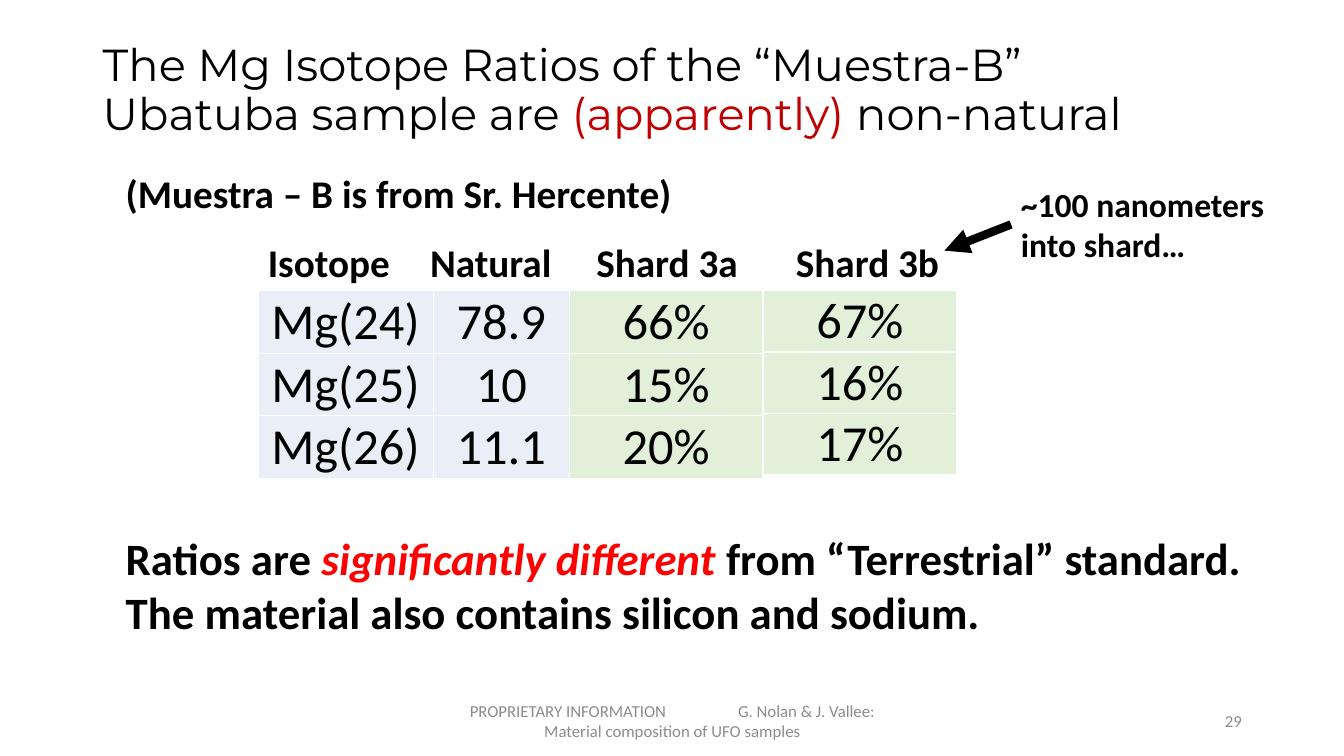
from lxml.etree import SubElement
from pptx import Presentation
from pptx.dml.color import RGBColor
from pptx.enum.shapes import MSO_CONNECTOR
from pptx.enum.text import MSO_ANCHOR, PP_ALIGN
from pptx.oxml.ns import qn
from pptx.util import Cm, Pt

BLACK = RGBColor(0x00, 0x00, 0x00)
WHITE = RGBColor(0xFF, 0xFF, 0xFF)
GREY = RGBColor(0x8C, 0x8C, 0x8C)
DARK_RED = RGBColor(0xC0, 0x00, 0x00)
RED = RGBColor(0xFF, 0x00, 0x00)
PALE_BLUE = RGBColor(0xEA, 0xEF, 0xF7)
PALE_GREEN = RGBColor(0xE2, 0xF0, 0xD9)

HEADING_WIDTH = 4.88  # cm, wide enough for the longest heading
COLUMNS = [  # heading, heading offset from table left (cm), width (cm), fill
    ("Isotope", 0, 4.42, PALE_BLUE),
    ("Natural", 4.09, 3.43, PALE_BLUE),
    ("Shard 3a", 8.28, 4.88, PALE_GREEN),
    ("Shard 3b", 13.31, 4.88, PALE_GREEN),
]
RATIOS = [
    ("Mg(24)", "78.9", "66%", "67%"),
    ("Mg(25)", "10", "15%", "16%"),
    ("Mg(26)", "11.1", "20%", "17%"),
]


def style(span, size, color=BLACK, bold=False, italic=False, font="Calibri"):
    span.font.name = font
    span.font.size = Pt(size)
    span.font.bold = bold
    span.font.italic = italic
    span.font.color.rgb = color


def add_text(page, box, lines, size, color=BLACK, bold=False, align=PP_ALIGN.LEFT,
             anchor=MSO_ANCHOR.TOP, wrap=True):
    """Place one paragraph per line in a box given in cm."""
    frame = page.shapes.add_textbox(*map(Cm, box)).text_frame
    frame.word_wrap = wrap
    frame.vertical_anchor = anchor
    for index, line in enumerate(lines):
        para = frame.add_paragraph() if index else frame.paragraphs[0]
        para.text = line
        para.alignment = align
        for span in para.runs:
            style(span, size, color, bold)
    return frame


def add_spans(para, spans, size, **look):
    """Append differently coloured spans to a paragraph."""
    for text, color, italic in spans:
        span = para.add_run()
        span.text = text
        style(span, size, color, italic=italic, **look)


def add_title(page, box):
    frame = add_text(page, box, [""], 32, anchor=MSO_ANCHOR.MIDDLE)
    para = frame.paragraphs[0]
    para.line_spacing = 0.9
    add_spans(para, [("The Mg Isotope Ratios of the “Muestra-B”", BLACK, False)],
              32, font="Montserrat")
    para.add_line_break()
    add_spans(para, [("Ubatuba sample are ", BLACK, False),
                     ("(apparently) ", DARK_RED, False),
                     ("non-natural", BLACK, False)], 32, font="Montserrat")


def add_subtitle(page, box):
    frame = add_text(page, box, ["(Muestra – B is from Sr. Hercente)"], 28, bold=True)
    frame.paragraphs[0].line_spacing = 0.9


def add_borders(cell):
    properties = cell._tc.get_or_add_tcPr()
    for side in ("a:lnL", "a:lnR", "a:lnT", "a:lnB"):
        line = SubElement(properties, qn(side), w=str(Pt(1)))
        fill = SubElement(line, qn("a:solidFill"))
        SubElement(fill, qn("a:srgbClr"), val=str(WHITE))


def add_ratio_table(page, left, top, first, last, row_height):
    """Draw the ratio columns first to last - 1 as one table."""
    columns = COLUMNS[first:last]
    width = sum(column[2] for column in columns)
    table = page.shapes.add_table(len(RATIOS), len(columns), Cm(left), Cm(top),
                                  Cm(width), Cm(row_height * len(RATIOS))).table
    table.first_row = table.horz_banding = False
    for table_column, column in zip(table.columns, columns):
        table_column.width = Cm(column[2])
    for row, values in enumerate(RATIOS):
        table.rows[row].height = Cm(row_height)
        for index, value in enumerate(values[first:last]):
            cell = table.cell(row, index)
            cell.margin_left = cell.margin_right = Cm(0.02)
            cell.margin_top = cell.margin_bottom = 0
            cell.vertical_anchor = MSO_ANCHOR.BOTTOM
            add_borders(cell)
            cell.fill.solid()
            cell.fill.fore_color.rgb = columns[index][3]
            para = cell.text_frame.paragraphs[0]
            para.text = value
            para.alignment = PP_ALIGN.CENTER
            style(para.runs[0], 36)


def add_ratios(page, box):
    left, top, width, heading_height = box
    for heading, offset, _, _ in COLUMNS:
        add_text(page, (left + offset, top, HEADING_WIDTH, heading_height), [heading],
                 28, bold=True)
    table_top = top + heading_height
    shard_3b_left = left + width - COLUMNS[-1][2]
    add_ratio_table(page, left, table_top, 0, 3, 1.58)
    add_ratio_table(page, shard_3b_left, table_top, 3, 4, 1.55)


def add_depth_note(page, box):
    left, top, _, height = box
    add_text(page, box, ["~100 nanometers", "into shard…"], 24, bold=True, wrap=False)
    # Arrow from the note to the Shard 3b heading
    start = top + height / 2
    arrow = page.shapes.add_connector(MSO_CONNECTOR.STRAIGHT, Cm(left), Cm(start),
                                      Cm(left - 1.68), Cm(start + 0.66))
    arrow.line.color.rgb = BLACK
    arrow.line.width = Pt(6)
    SubElement(arrow.line._get_or_add_ln(), qn("a:tailEnd"), type="triangle")
    SubElement(arrow._element.spPr, qn("a:effectLst"))


def add_conclusion(page, box):
    frame = add_text(page, box, ["", "The material also contains silicon and sodium."],
                     32, bold=True)
    add_spans(frame.paragraphs[0], [("Ratios are ", BLACK, False),
                                    ("significantly different ", RED, True),
                                    ("from “Terrestrial” standard.", BLACK, False)],
              32, bold=True)


def add_footer(page, box):
    left, top, width, height = box
    note_width = 11.43
    frame = add_text(page, (left, top, note_width, height),
                     ["PROPRIETARY INFORMATION\tG. Nolan & J. Vallee: "
                      "Material composition of UFO samples"],
                     12, GREY, align=PP_ALIGN.CENTER, anchor=MSO_ANCHOR.MIDDLE)
    # Tab stop between the notice and the authors
    properties = frame.paragraphs[0]._p.get_or_add_pPr()
    tabs = SubElement(properties, qn("a:tabLst"))
    SubElement(tabs, qn("a:tab"), pos=str(Cm(6.76)), algn="l")
    # Page number
    add_text(page, (left + note_width + 1.27, top, width - note_width - 1.27, height),
             ["29"], 12, GREY, align=PP_ALIGN.RIGHT, anchor=MSO_ANCHOR.MIDDLE)


def main():
    deck = Presentation()
    deck.slide_width, deck.slide_height = Cm(33.87), Cm(19.05)
    page = deck.slides.add_slide(deck.slide_layouts[6])
    add_title(page, (2.34, 0.66, 29.21, 3.3))
    add_subtitle(page, (2.92, 4.27, 21.03, 1.6))
    add_ratios(page, (6.5, 5.87, 17.61, 1.45))
    add_depth_note(page, (25.48, 4.5, 6.71, 2.31))
    add_conclusion(page, (2.92, 13.26, 30.48, 3))
    add_footer(page, (11.23, 17.65, 20.32, 1.02))
    deck.save("out.pptx")


if __name__ == "__main__":
    main()
